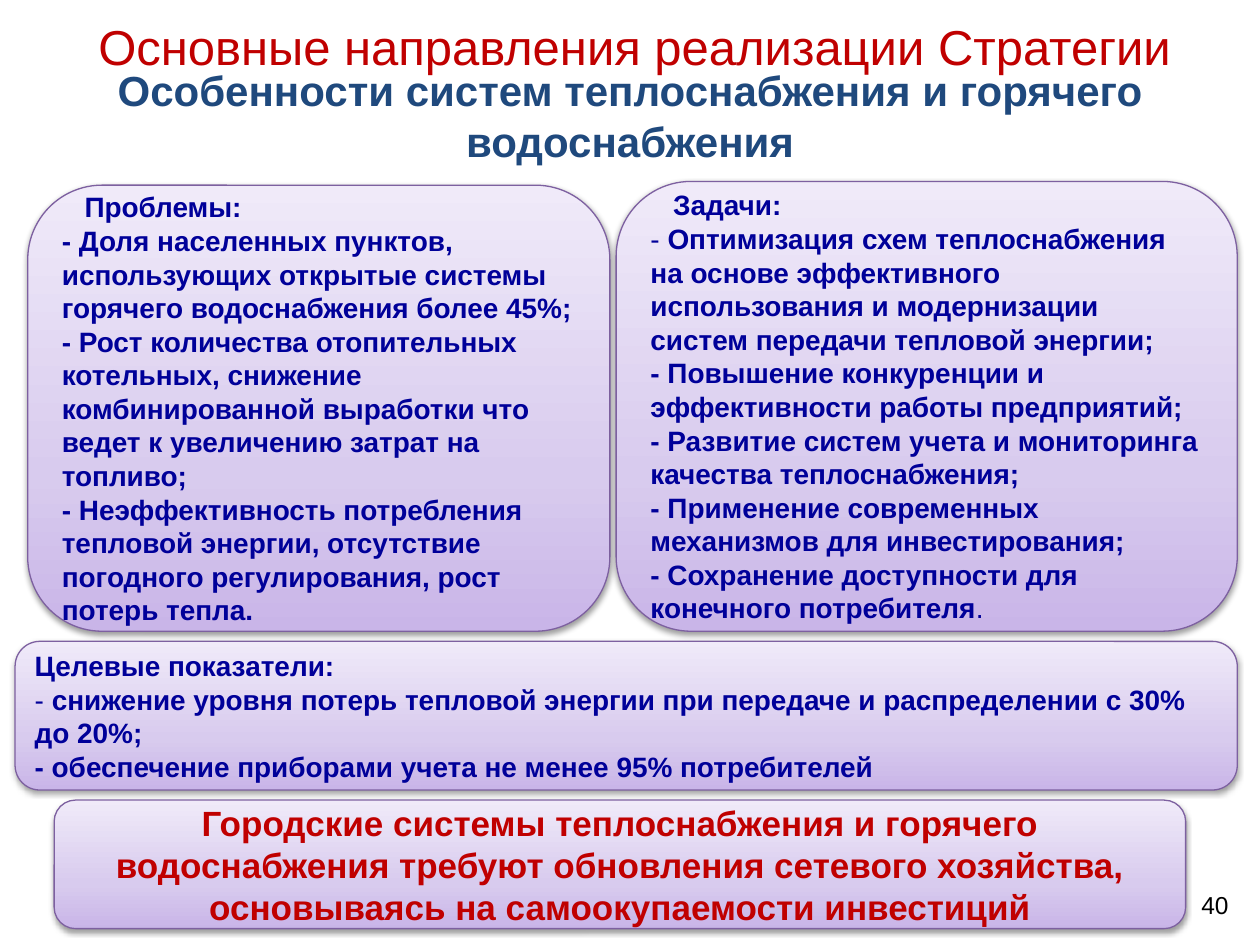
from dataclasses import dataclass

from lxml.etree import SubElement
from pptx import Presentation
from pptx.dml.color import RGBColor
from pptx.enum.shapes import MSO_SHAPE
from pptx.enum.text import MSO_ANCHOR, PP_ALIGN
from pptx.oxml import parse_xml
from pptx.oxml.ns import nsdecls, qn
from pptx.util import Inches, Pt


@dataclass(frozen=True)
class Theme:
    font: str = "Arial"
    red: str = "C00000"
    blue: str = "1F497D"
    navy: str = "000099"
    black: str = "000000"
    outline: str = "7D60A0"
    gradient: tuple = ((0, "C9B5E8"), (35, "D8CBEE"), (100, "F0EAF9"))
    heading: int = 28
    title: int = 24
    summary: int = 20
    body: int = 16
    number: int = 14


theme = Theme()


def add_text(sp, paragraphs, size, color, bold=False, align=PP_ALIGN.LEFT, first_indent=0):
    """Fill a shape; a paragraph is a string or a list of (text, bold) runs."""
    tf = sp.text_frame
    tf.word_wrap = True
    tf.vertical_anchor = MSO_ANCHOR.MIDDLE
    for i, runs in enumerate(paragraphs):
        p = tf.paragraphs[0] if i == 0 else tf.add_paragraph()
        p.alignment = align
        if i == 0 and first_indent:
            p._p.get_or_add_pPr().set("indent", str(Inches(first_indent)))
        for text, run_bold in [(runs, bold)] if isinstance(runs, str) else runs:
            r = p.add_run()
            r.text = text
            r.font.name = theme.font
            r.font.size = Pt(size)
            r.font.bold = run_bold
            r.font.color.rgb = RGBColor.from_string(color)


def add_panel(s, box):
    """Add a rounded panel with a lilac gradient and a soft shadow."""
    sp = s.shapes.add_shape(MSO_SHAPE.ROUNDED_RECTANGLE, *map(Inches, box))
    sp.line.color.rgb = RGBColor.from_string(theme.outline)
    sp.line.width = Pt(0.75)
    sp.shadow.inherit = False
    spPr = sp._element.spPr
    stops = "".join(f'<a:gs pos="{pos * 1000}"><a:srgbClr val="{color}"/></a:gs>'
                    for pos, color in theme.gradient)
    spPr.find(qn("a:ln")).addprevious(parse_xml(
        f'<a:gradFill {nsdecls("a")} rotWithShape="1"><a:gsLst>{stops}</a:gsLst>'
        '<a:lin ang="16200000" scaled="0"/></a:gradFill>'))
    shadow = SubElement(spPr.find(qn("a:effectLst")), qn("a:outerShdw"),
                        blurRad="40000", dist="20000", dir="5400000", rotWithShape="0")
    shade = SubElement(shadow, qn("a:srgbClr"), val=theme.black)
    SubElement(shade, qn("a:alpha"), val="38000")
    return sp


prs = Presentation()
prs.slide_width, prs.slide_height = Inches(10), Inches(7.5)
s = prs.slides.add_slide(prs.slide_layouts[6])

targets = [
    "Целевые показатели:",
    [("- ", False),
     ("снижение уровня потерь тепловой энергии при передаче и распределении с 30% до 20%;", True)],
    "- обеспечение приборами учета не менее 95% потребителей",
]
problems = [
    "Проблемы:",
    "- Доля населенных пунктов, использующих открытые системы горячего водоснабжения более 45%;",
    "- Рост количества отопительных котельных, снижение комбинированной выработки "
    "что ведет к увеличению затрат на топливо;",
    "- Неэффективность потребления тепловой энергии, отсутствие погодного регулирования, "
    "рост потерь тепла.",
]
tasks = [
    "Задачи:",
    [("- ", False),
     ("Оптимизация схем теплоснабжения на основе эффективного использования "
      "и модернизации систем передачи тепловой энергии;", True)],
    "- Повышение конкуренции и эффективности работы предприятий;",
    "- Развитие систем учета и мониторинга качества теплоснабжения;",
    "- Применение современных механизмов для инвестирования;",
    [("- Сохранение доступности для конечного потребителя", True), (".", False)],
]
summary = ["Городские системы теплоснабжения и горячего водоснабжения требуют обновления "
           "сетевого хозяйства, основываясь на самоокупаемости инвестиций"]

for box, paragraphs, first_indent in [
    ((0.12, 5.09, 9.7, 1.18), targets, 0),
    ((0.22, 1.47, 4.62, 3.54), problems, 0.18),
    ((4.89, 1.44, 4.93, 3.57), tasks, 0.18),
]:
    add_text(add_panel(s, box), paragraphs, theme.body, theme.navy, bold=True,
             first_indent=first_indent)

add_text(add_panel(s, (0.43, 6.35, 8.98, 1.02)), summary, theme.summary, theme.red,
         bold=True, align=PP_ALIGN.CENTER)

for box, text, size, color, bold, align in [
    ((0.04, 0.63, 9.92, 0.57), "Особенности систем теплоснабжения и горячего водоснабжения",
     theme.title, theme.blue, True, PP_ALIGN.CENTER),
    ((0.22, 0, 9.63, 0.73), "Основные направления реализации Стратегии",
     theme.heading, theme.red, False, PP_ALIGN.CENTER),
    ((7.52, 6.98, 2.33, 0.4), "40", theme.number, theme.black, False, PP_ALIGN.RIGHT),
]:
    add_text(s.shapes.add_textbox(*map(Inches, box)), [text], size, color, bold, align)

prs.save("out.pptx")
